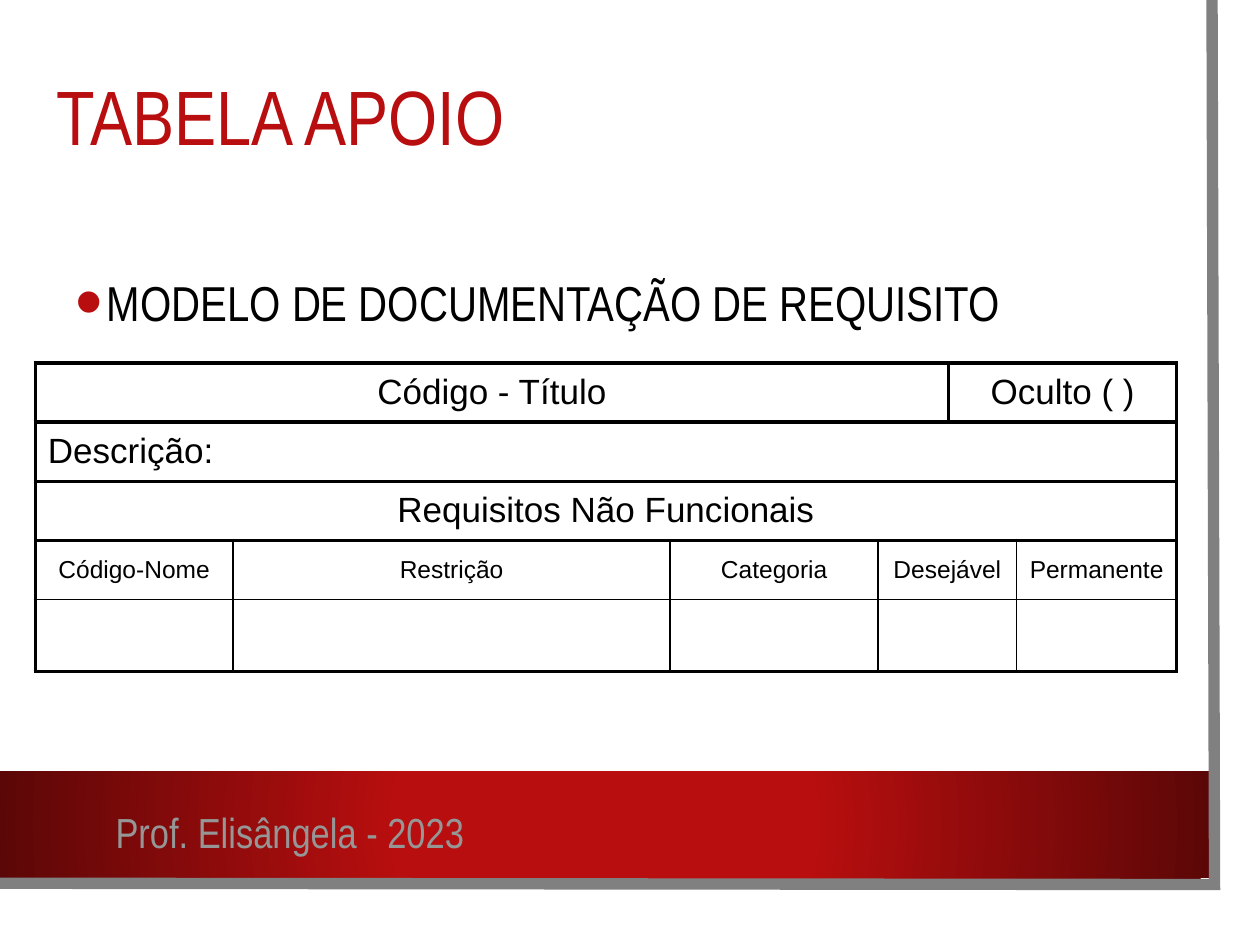
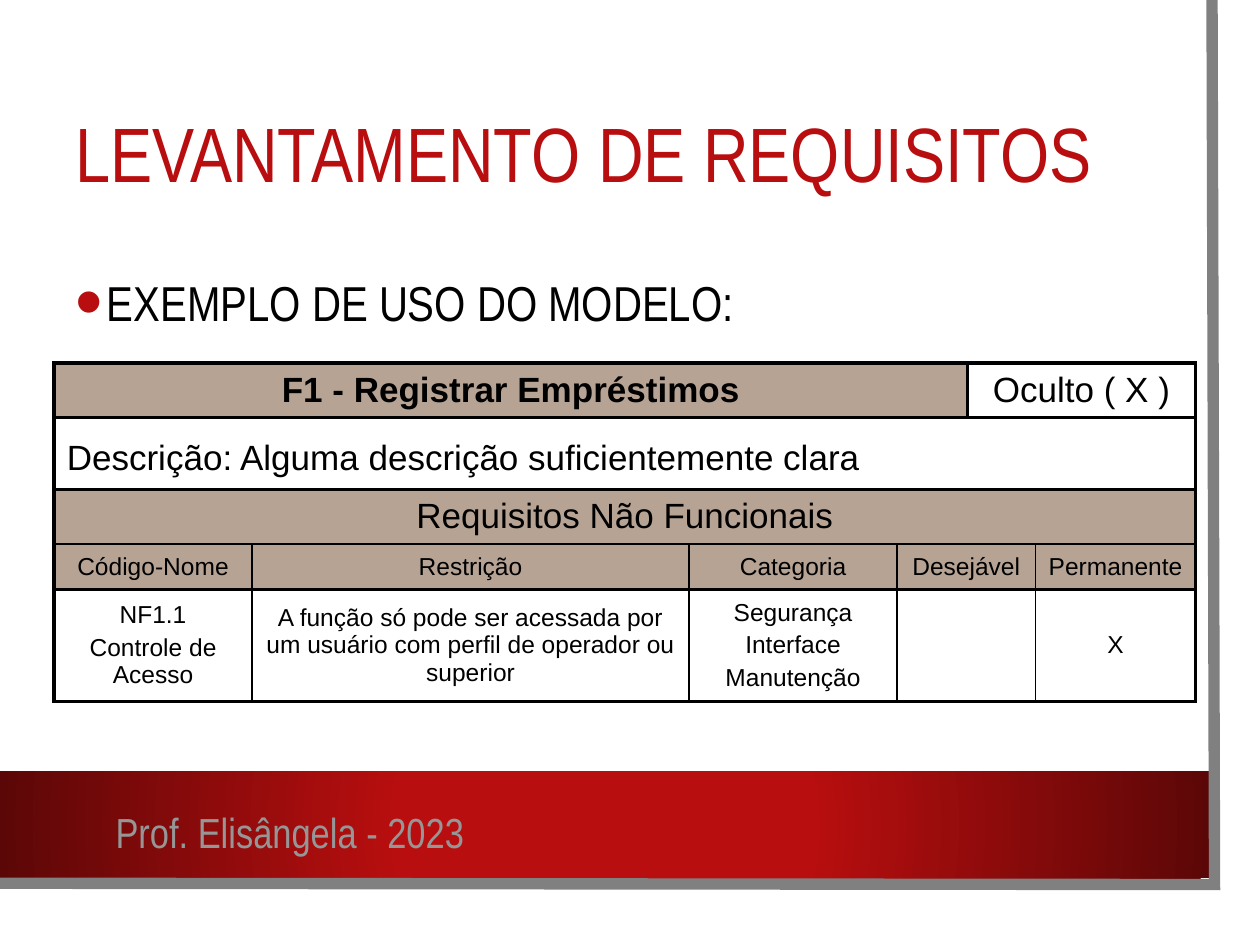
from dataclasses import dataclass

from lxml.etree import SubElement
from pptx import Presentation
from pptx.dml.color import RGBColor
from pptx.enum.shapes import MSO_SHAPE
from pptx.enum.text import MSO_ANCHOR, PP_ALIGN
from pptx.oxml import parse_xml
from pptx.oxml.ns import nsdecls, qn
from pptx.util import Inches, Pt


@dataclass(frozen=True)
class Theme:
    red: str = "B80E0F"
    dark_red: str = "5C0707"
    gray: str = "808080"
    footer_gray: str = "969696"
    tan: str = "B6A394"
    black: str = "000000"
    white: str = "FFFFFF"
    heading_font: str = "Arial Narrow"
    table_font: str = "Arial"
    title_size: int = 44
    topic_size: int = 28
    footer_size: int = 24
    table_size: int = 20
    detail_size: int = 14
    heavy_rule: float = 2.25
    thin_rule: float = 1
    frame_width: float = 6.5


THEME = Theme()
COLUMN_WIDTHS = (1.57, 3.47, 1.65, 0.56, 0.54, 1.27)
ROW_SPANS = (
    ((0, 3), (4, 5)),
    ((0, 5),),
    ((0, 5),),
    ((0, 0), (1, 1), (2, 2), (3, 4), (5, 5)),
    ((0, 0), (1, 1), (2, 2), (3, 4), (5, 5)),
)
DESCRIPTION_ROW = 1
FIRST_DETAIL_ROW = 3
REQUIREMENT_HEADINGS = ("Código-Nome", "Restrição", "Categoria", "Desejável", "Permanente")


def write_text(frame, text, size, font=THEME.heading_font, color=THEME.black, bold=False,
               align=PP_ALIGN.LEFT, anchor=MSO_ANCHOR.TOP, line_spacing=None, gap=0):
    frame.word_wrap = True
    frame.vertical_anchor = anchor
    for index, line in enumerate(text.split("\n")):
        paragraph = frame.add_paragraph() if index else frame.paragraphs[0]
        paragraph.alignment = align
        if line_spacing:
            paragraph.line_spacing = line_spacing
        if index and gap:
            paragraph.space_before = Pt(gap)
        run = paragraph.add_run()
        run.text = line
        run.font.name = font
        run.font.size = Pt(size)
        run.font.bold = bold
        run.font.color.rgb = RGBColor.from_string(color)


def add_text(slide, box, text, **text_format):
    frame = slide.shapes.add_textbox(*map(Inches, box)).text_frame
    write_text(frame, text, **text_format)
    return frame


def add_rectangle(slide, width, height, top=0):
    rectangle = slide.shapes.add_shape(
        MSO_SHAPE.RECTANGLE, 0, Inches(top), Inches(width), Inches(height))
    rectangle.shadow.inherit = False
    rectangle.line.fill.background()
    rectangle.fill.solid()
    rectangle.fill.fore_color.rgb = RGBColor.from_string(THEME.white)
    return rectangle


def add_red_band(slide):
    band = add_rectangle(slide, 9.6, 0.85, top=6.12)
    properties = band._element.spPr
    gradient = parse_xml(
        f'<a:gradFill {nsdecls("a")} rotWithShape="1"><a:gsLst>'
        f'<a:gs pos="34000"><a:srgbClr val="{THEME.red}"/></a:gs>'
        f'<a:gs pos="100000"><a:srgbClr val="{THEME.dark_red}"/></a:gs></a:gsLst>'
        '<a:path path="circle"><a:fillToRect l="50000" t="50000" r="50000" b="50000"/>'
        '</a:path></a:gradFill>')
    properties.replace(properties.find(qn("a:solidFill")), gradient)


def add_gray_frame(slide):
    builder = slide.shapes.build_freeform(Inches(9.62), 0)
    builder.add_line_segments(
        [(Inches(9.64), Inches(7.02)), (Inches(-0.02), Inches(7.01))], close=False)
    frame = builder.convert_to_shape()
    frame.shadow.inherit = False
    frame.fill.background()
    frame.line.color.rgb = RGBColor.from_string(THEME.gray)
    frame.line.width = Pt(THEME.frame_width)
    SubElement(frame.line._ln, qn("a:miter"), lim="800000")


def add_backdrop(slide):
    add_rectangle(slide, 9.83, 7.27)
    add_red_band(slide)
    add_gray_frame(slide)


def add_title(slide, title, left, top):
    add_text(slide, (left, top, 9, 1.5), title, size=THEME.title_size, color=THEME.red,
             anchor=MSO_ANCHOR.MIDDLE, line_spacing=0.9)


def add_topic(slide, topic):
    frame = add_text(slide, (0.5, 2.02, 8.99, 0.8), topic, size=THEME.topic_size,
                     line_spacing=1.2)
    properties = frame.paragraphs[0]._p.get_or_add_pPr()
    properties.set("marL", str(Inches(0.25)))
    properties.set("indent", str(-Inches(0.25)))
    bullet_color = SubElement(properties, qn("a:buClr"))
    SubElement(bullet_color, qn("a:srgbClr"), val=THEME.red)
    SubElement(properties, qn("a:buSzPct"), val="160000")
    SubElement(properties, qn("a:buFont"), typeface="Arial")
    SubElement(properties, qn("a:buChar"), char="•")


def add_footer(slide):
    add_text(slide, (-0.22, 6.35, 5.04, 0.5), "Prof. Elisângela - 2023",
             size=THEME.footer_size, color=THEME.footer_gray, align=PP_ALIGN.CENTER)


def set_borders(cell, left, right, top, bottom):
    properties = cell._tc.get_or_add_tcPr()
    sides = zip(("lnL", "lnR", "lnT", "lnB"), (left, right, top, bottom))
    for position, (side, width) in enumerate(sides):
        properties.insert(position, parse_xml(
            f'<a:{side} {nsdecls("a")} w="{Pt(width)}"><a:solidFill>'
            f'<a:srgbClr val="{THEME.black}"/></a:solidFill></a:{side}>'))


def fill_cell(cell, color):
    if color:
        cell.fill.solid()
        cell.fill.fore_color.rgb = RGBColor.from_string(color)
    else:
        cell.fill.background()


def add_requirement_table(slide, left, row_heights, rows, thin_rule_at, shaded=(),
                          bold_title=False, description_inset=0.05):
    table = slide.shapes.add_table(
        len(rows), len(COLUMN_WIDTHS), Inches(left), Inches(2.88),
        Inches(sum(COLUMN_WIDTHS)), Inches(sum(row_heights))).table
    table.first_row = table.horz_banding = False
    for column, width in zip(table.columns, COLUMN_WIDTHS):
        column.width = Inches(width)
    for row, height in zip(table.rows, row_heights):
        row.height = Inches(height)

    rules = [THEME.heavy_rule] * (len(rows) + 1)
    rules[thin_rule_at] = THEME.thin_rule
    last_column = len(COLUMN_WIDTHS) - 1
    for row, (texts, spans) in enumerate(zip(rows, ROW_SPANS)):
        is_detail = row >= FIRST_DETAIL_ROW
        inner_rule = THEME.thin_rule if is_detail else THEME.heavy_rule
        for text, (first, last) in zip(texts, spans):
            cell = table.cell(row, first)
            if last > first:
                cell.merge(table.cell(row, last))
            for column in range(first, last + 1):
                part = table.cell(row, column)
                fill_cell(part, THEME.tan if (row, first) in shaded else None)
                set_borders(part,
                            inner_rule if first else THEME.heavy_rule,
                            THEME.heavy_rule if last == last_column else inner_rule,
                            rules[row], rules[row + 1])
            if text:
                is_description = row == DESCRIPTION_ROW
                if is_description:
                    cell.margin_top = Inches(description_inset)
                write_text(cell.text_frame, text, font=THEME.table_font,
                           size=THEME.detail_size if is_detail else THEME.table_size,
                           bold=bold_title and (row, first) == (0, 0),
                           align=PP_ALIGN.LEFT if is_description else PP_ALIGN.CENTER,
                           gap=0.2 * THEME.detail_size)
                cell.vertical_anchor = MSO_ANCHOR.MIDDLE


def add_requirement_slide(deck, title, title_at, topic, **table_options):
    slide = deck.slides.add_slide(deck.slide_layouts[6])
    add_backdrop(slide)
    add_title(slide, title, *title_at)
    add_topic(slide, topic)
    add_requirement_table(slide, **table_options)
    add_footer(slide)


def main():
    deck = Presentation()
    deck.slide_width, deck.slide_height = Inches(10), Inches(7.5)
    add_requirement_slide(
        deck, "TABELA APOIO", (0.35, 0.21), "MODELO DE DOCUMENTAÇÃO DE REQUISITO",
        left=0.28, row_heights=(0.47, 0.47, 0.47, 0.47, 0.57), thin_rule_at=4,
        rows=(("Código - Título", "Oculto ( )"),
              ("Descrição:",),
              ("Requisitos Não Funcionais",),
              REQUIREMENT_HEADINGS,
              ("",) * len(REQUIREMENT_HEADINGS)))
    add_requirement_slide(
        deck, "LEVANTAMENTO DE REQUISITOS", (0.5, 0.5), "EXEMPLO DE USO DO MODELO:",
        left=0.43, row_heights=(0.43, 0.57, 0.43, 0.36, 0.89), thin_rule_at=3,
        rows=(("F1 - Registrar Empréstimos", "Oculto ( X )"),
              ("Descrição: Alguma descrição suficientemente clara",),
              ("Requisitos Não Funcionais",),
              REQUIREMENT_HEADINGS,
              ("NF1.1\nControle de Acesso",
               "A função só pode ser acessada por um usuário com perfil de operador ou superior",
               "Segurança\nInterface\nManutenção", "", "X")),
        shaded={(0, 0), (2, 0)} | {(3, first) for first, _ in ROW_SPANS[3]},
        bold_title=True, description_inset=0.13)
    deck.save("out.pptx")


if __name__ == "__main__":
    main()
